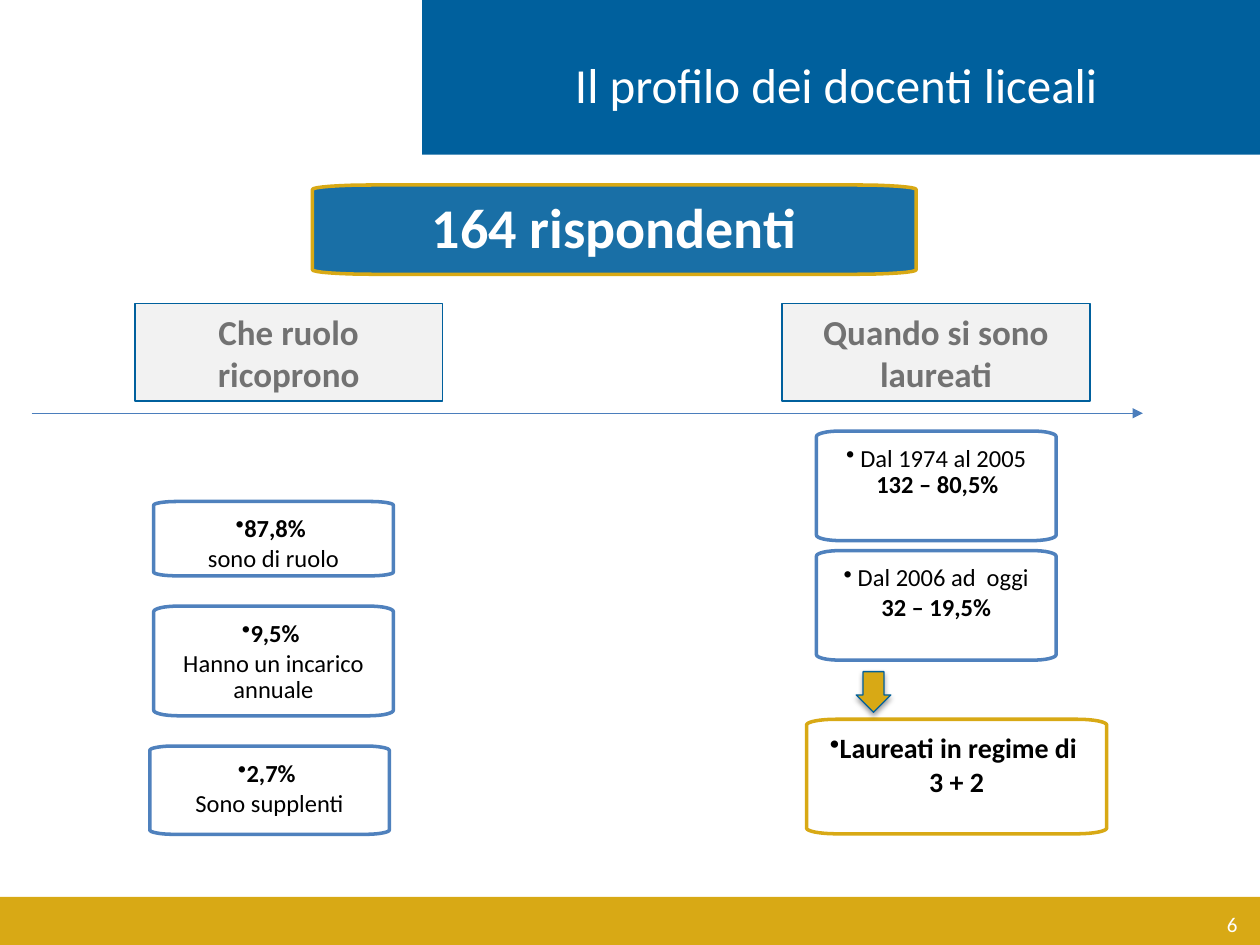
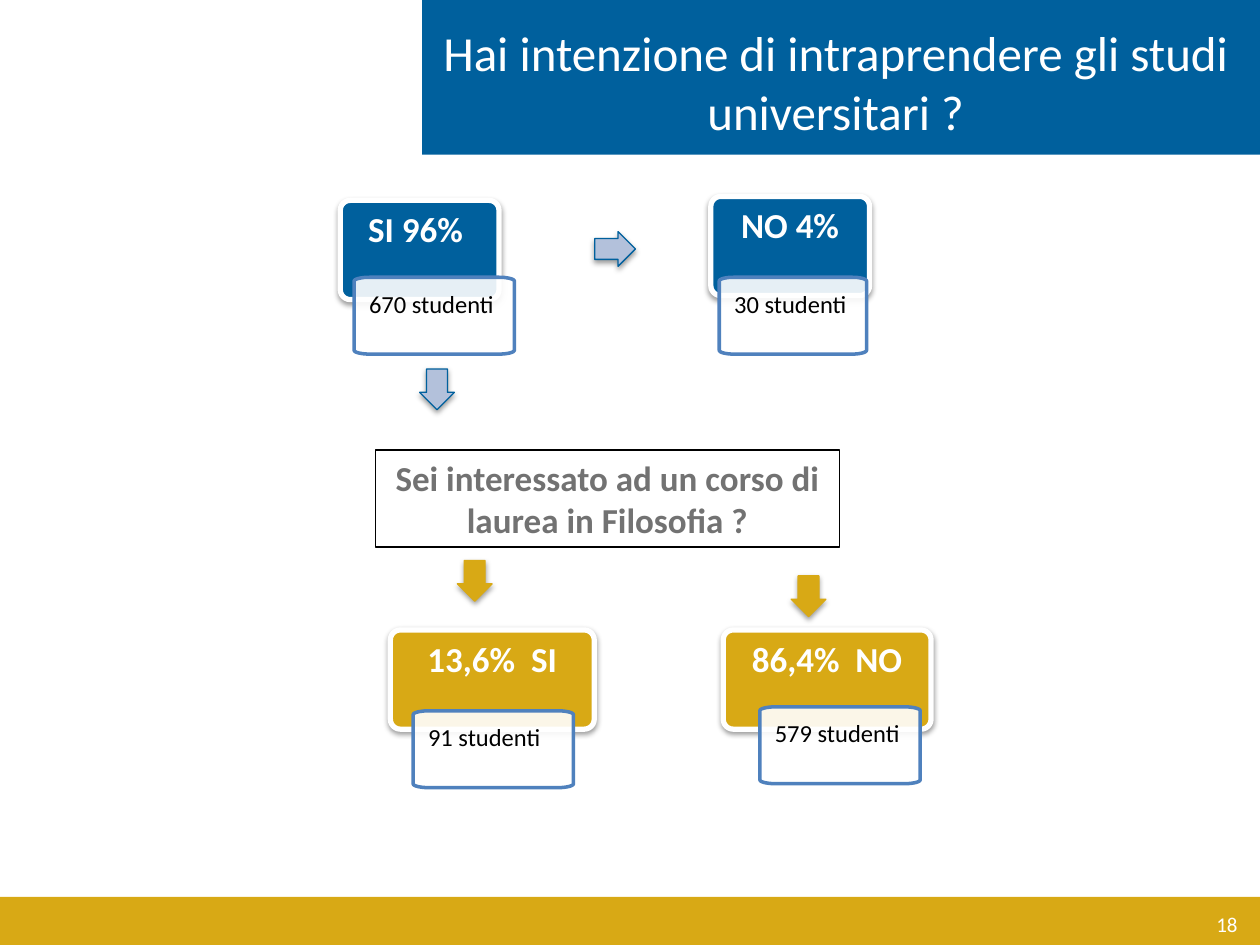
from dataclasses import dataclass
from math import cos, pi, sin

from lxml.etree import SubElement
from pptx import Presentation
from pptx.dml.color import RGBColor
from pptx.enum.shapes import MSO_CONNECTOR as Connector
from pptx.enum.shapes import MSO_SHAPE as Preset
from pptx.enum.text import MSO_ANCHOR as Anchor
from pptx.enum.text import MSO_AUTO_SIZE as AutoSize
from pptx.enum.text import PP_ALIGN as Align
from pptx.oxml.ns import qn
from pptx.util import Cm, Pt


@dataclass(frozen=True)
class Theme:
    font: str = "Calibri"
    blue: str = "00609D"
    gold: str = "D8A915"
    outline: str = "4F81BD"
    axis: str = "4B7EBC"
    pale_blue: str = "B3C1DB"
    pale_gray: str = "F2F2F2"
    gray: str = "727272"
    white: str = "FFFFFF"
    black: str = "000000"
    title: int = 28
    banner: int = 32
    heading: int = 20
    emphasis: int = 16
    body: int = 14
    number: int = 12


THEME = Theme()
SLIDE_SIZE = (25.4, 19.05)
HEADER = (8.51, 0, 16.89, 3.12)
FOOTER = (0, 18.08, 25.4, 0.97)
NUMBER_BOX = (19.28, 18.11, 5.92, 1.02)
ARROW_LENGTH, ARROW_WIDTH = 0.82, 0.7
BOX_INSETS = (0.3, 0.3, 0.3, 0.3)
CARD_INSETS = (0.18, 0.18, 0.18, 0.64)

PROFILE = {
    "title": "Il profilo dei docenti liceali",
    "title_box": (8.31, 0.97, 17.09, 1.12),
    "number": "6",
    "banner": ("164 rispondenti", (6.3, 3.73, 12.17, 1.8)),
    "headings": [("Che ruolo ricoprono", 2.72), ("Quando si sono laureati", 15.77)],
    "axis": (0.64, 23.04, 8.33),
    "boxes": [
        ([[("87,8% ", True)], [("sono di ruolo", False)]], (3.1, 10.11, 4.83, 1.5)),
        ([[("9,5% ", True)], [("Hanno un incarico annuale", False)]], (3.1, 12.22, 4.83, 2.21)),
        ([[("2,7% ", True)], [("Sono supplenti", False)]], (3.02, 15.04, 4.83, 1.78)),
        ([[(" Dal 1974 al 2005 ", False), ("132 – 80,5% ", True)]], (16.46, 8.69, 4.83, 2.21)),
        ([[(" Dal 2006 ad  oggi", False)], [("32 – 19,5%", True)]], (16.46, 11.1, 4.83, 2.21)),
    ],
    "outcome": ([[("Laureati in regime di ", True)], [("3 + 2", True)]], (16.26, 14.5, 6.05, 2.31)),
    "arrow": (17.26, 13.54),
}

INTENTION = {
    "title": "Hai intenzione di intraprendere gli studi universitari ?",
    "title_box": (8.59, 0.33, 16.51, 2.64),
    "number": "18",
    "question": ("Sei interessato ad un corso di laurea in Filosofia ?", (7.57, 9.07, 9.35, 1.96)),
    "answers": [
        ("SI 96% ", THEME.blue, (6.86, 4.04, 3.2), "670 studenti", (7.14, 5.59, 3.23)),
        ("NO 4%", THEME.blue, (14.33, 3.96, 3.2), "30 studenti", (14.5, 5.59, 2.97)),
        ("13,6%  SI", THEME.gold, (7.87, 12.7, 4.11), "91 studenti", (8.33, 14.33, 3.23)),
        ("86,4%  NO", THEME.gold, (14.58, 12.7, 4.19), "579 studenti", (15.32, 14.25, 3.23)),
    ],
    "arrows": [
        ((11.99, 4.67), False, THEME.pale_blue, THEME.blue),
        ((8.46, 7.44), True, THEME.pale_blue, THEME.blue),
        ((9.22, 11.3), True, THEME.gold, THEME.gold),
        ((15.95, 11.61), True, THEME.gold, THEME.gold),
    ],
}
CARD_HEIGHT, NOTE_HEIGHT, HEADING_SIZE = 2.0, 1.55, (6.2, 1.96)
HEADING_TOP = 6.12


def lengths(values):
    return [Cm(value) for value in values]


def color(value):
    return RGBColor.from_string(value)


def write_text(shape, content, *, size, ink=THEME.black, bold=False, align=Align.CENTER,
               anchor=Anchor.TOP, insets=(0.25, 0.13, 0.25, 0.13), spacing=None,
               after=0, bullet=False):
    frame = shape.text_frame
    frame.word_wrap = True
    frame.auto_size = AutoSize.NONE
    frame.vertical_anchor = anchor
    frame.margin_left, frame.margin_top, frame.margin_right, frame.margin_bottom = lengths(insets)
    paragraphs = [[(content, bold)]] if isinstance(content, str) else content
    for index, runs in enumerate(paragraphs):
        paragraph = frame.add_paragraph() if index else frame.paragraphs[0]
        paragraph.alignment = align
        paragraph.line_spacing = spacing
        paragraph.space_after = Pt(after)
        if bullet and index == 0:
            add_bullet(paragraph)
        for text, strong in runs:
            run = paragraph.add_run()
            run.text = text
            run.font.name = THEME.font
            run.font.size = Pt(size)
            run.font.bold = strong
            run.font.color.rgb = color(ink)


def add_bullet(paragraph):
    properties = paragraph._p.get_or_add_pPr()
    properties.set("marL", str(Cm(0.16)))
    properties.set("indent", str(Cm(-0.16)))
    SubElement(properties, qn("a:buChar"), char="•")


def style(shape, *, fill=None, line=None, width=0.75, opacity=100, shadow=False):
    shape.shadow.inherit = False
    if fill:
        shape.fill.solid()
        shape.fill.fore_color.rgb = color(fill)
    else:
        shape.fill.background()
    if line:
        shape.line.color.rgb = color(line)
        shape.line.width = Pt(width)
    else:
        shape.line.fill.background()
    properties = shape._element.spPr
    if opacity < 100:
        tone = properties.find(qn("a:solidFill"))[0]
        SubElement(tone, qn("a:alpha"), val=str(opacity * 1000))
    if shadow:
        effect = SubElement(properties.find(qn("a:effectLst")), qn("a:outerShdw"),
                            blurRad=str(Pt(3.1)), dist=str(Pt(1.6)),
                            dir="5400000", rotWithShape="0")
        tone = SubElement(effect, qn("a:srgbClr"), val=THEME.black)
        SubElement(tone, qn("a:alpha"), val="38000")


def add_preset(slide, preset, box, **look):
    shape = slide.shapes.add_shape(preset, *lengths(box))
    style(shape, **look)
    return shape


def add_soft_box(slide, box, *, fill=THEME.white, line=THEME.outline, steps=8):
    left, top, width, height = lengths(box)
    radius_x, radius_y = width * 0.1, height * 0.05
    corners = [
        (left + width - radius_x, top + radius_y, -pi / 2),
        (left + width - radius_x, top + height - radius_y, 0),
        (left + radius_x, top + height - radius_y, pi / 2),
        (left + radius_x, top + radius_y, pi),
    ]
    points = []
    for center_x, center_y, start in corners:
        for step in range(steps + 1):
            angle = start + step / steps * pi / 2
            points.append((round(center_x + radius_x * cos(angle)),
                           round(center_y + radius_y * sin(angle))))
    builder = slide.shapes.build_freeform(*points[0])
    builder.add_line_segments(points[1:], close=True)
    shape = builder.convert_to_shape()
    style(shape, fill=fill, line=line, width=2, opacity=90)
    return shape


def add_arrow(slide, corner, *, down=True, fill=THEME.gold, line=THEME.blue):
    size = (ARROW_WIDTH, ARROW_LENGTH) if down else (ARROW_LENGTH, ARROW_WIDTH)
    preset = Preset.DOWN_ARROW if down else Preset.RIGHT_ARROW
    arrow = add_preset(slide, preset, (*corner, *size), fill=fill, line=line, shadow=True)
    arrow.adjustments[0], arrow.adjustments[1] = 0.6, 0.5


def add_axis(slide, start, end, height):
    axis = slide.shapes.add_connector(Connector.STRAIGHT, *lengths((start, height, end, height)))
    axis.line.color.rgb = color(THEME.axis)
    axis.line.width = Pt(0.75)
    properties = axis._element.spPr
    SubElement(properties.find(qn("a:ln")), qn("a:tailEnd"), type="triangle")
    SubElement(properties, qn("a:effectLst"))


def add_framed_slide(presentation, content):
    slide = presentation.slides.add_slide(presentation.slide_layouts[5])
    add_preset(slide, Preset.RECTANGLE, FOOTER, fill=THEME.gold)
    add_preset(slide, Preset.RECTANGLE, HEADER, fill=THEME.blue)
    number = slide.shapes.add_textbox(*lengths(NUMBER_BOX))
    write_text(number, content["number"], size=THEME.number, ink=THEME.white,
               align=Align.RIGHT, anchor=Anchor.MIDDLE)
    title = slide.shapes.title
    title.left, title.top, title.width, title.height = lengths(content["title_box"])
    write_text(title, content["title"], size=THEME.title, ink=THEME.white)
    title._element.getparent().append(title._element)
    return slide


def build_profile(presentation):
    slide = add_framed_slide(presentation, PROFILE)
    add_axis(slide, *PROFILE["axis"])
    for text, left in PROFILE["headings"]:
        heading = add_preset(slide, Preset.RECTANGLE, (left, HEADING_TOP, *HEADING_SIZE),
                             fill=THEME.pale_gray, line=THEME.blue, width=1)
        write_text(heading, text, size=THEME.heading, ink=THEME.gray, bold=True)
    compact = {"insets": BOX_INSETS, "spacing": 0.9, "after": 2}
    for text, box in PROFILE["boxes"]:
        write_text(add_soft_box(slide, box), text, size=THEME.body, bullet=True, **compact)
    text, box = PROFILE["outcome"]
    outcome = add_soft_box(slide, box, line=THEME.gold)
    write_text(outcome, text, size=THEME.emphasis, bullet=True, **compact)
    add_arrow(slide, PROFILE["arrow"])
    text, box = PROFILE["banner"]
    banner = add_soft_box(slide, box, fill=THEME.blue, line=THEME.gold)
    write_text(banner, text, size=THEME.banner, ink=THEME.white, bold=True, **compact)


def build_intention(presentation):
    slide = add_framed_slide(presentation, INTENTION)
    text, box = INTENTION["question"]
    question = add_preset(slide, Preset.RECTANGLE, box, line=THEME.black)
    write_text(question, text, size=THEME.heading, ink=THEME.gray, bold=True)
    for answer, fill, card_place, count, note_place in INTENTION["answers"]:
        card = add_preset(slide, Preset.ROUNDED_RECTANGLE, (*card_place, CARD_HEIGHT),
                          fill=fill, line=THEME.white, width=3, shadow=True)
        card.adjustments[0] = 0.1
        write_text(card, answer, size=THEME.heading, ink=THEME.white, bold=True,
                   insets=CARD_INSETS, spacing=0.9, after=7)
        note = add_soft_box(slide, (*note_place, NOTE_HEIGHT))
        write_text(note, count, size=THEME.body, align=Align.LEFT,
                   insets=BOX_INSETS, spacing=0.9, after=2)
    for corner, down, fill, line in INTENTION["arrows"]:
        add_arrow(slide, corner, down=down, fill=fill, line=line)


def main():
    presentation = Presentation()
    presentation.slide_width, presentation.slide_height = lengths(SLIDE_SIZE)
    build_profile(presentation)
    build_intention(presentation)
    presentation.save("out.pptx")


if __name__ == "__main__":
    main()
